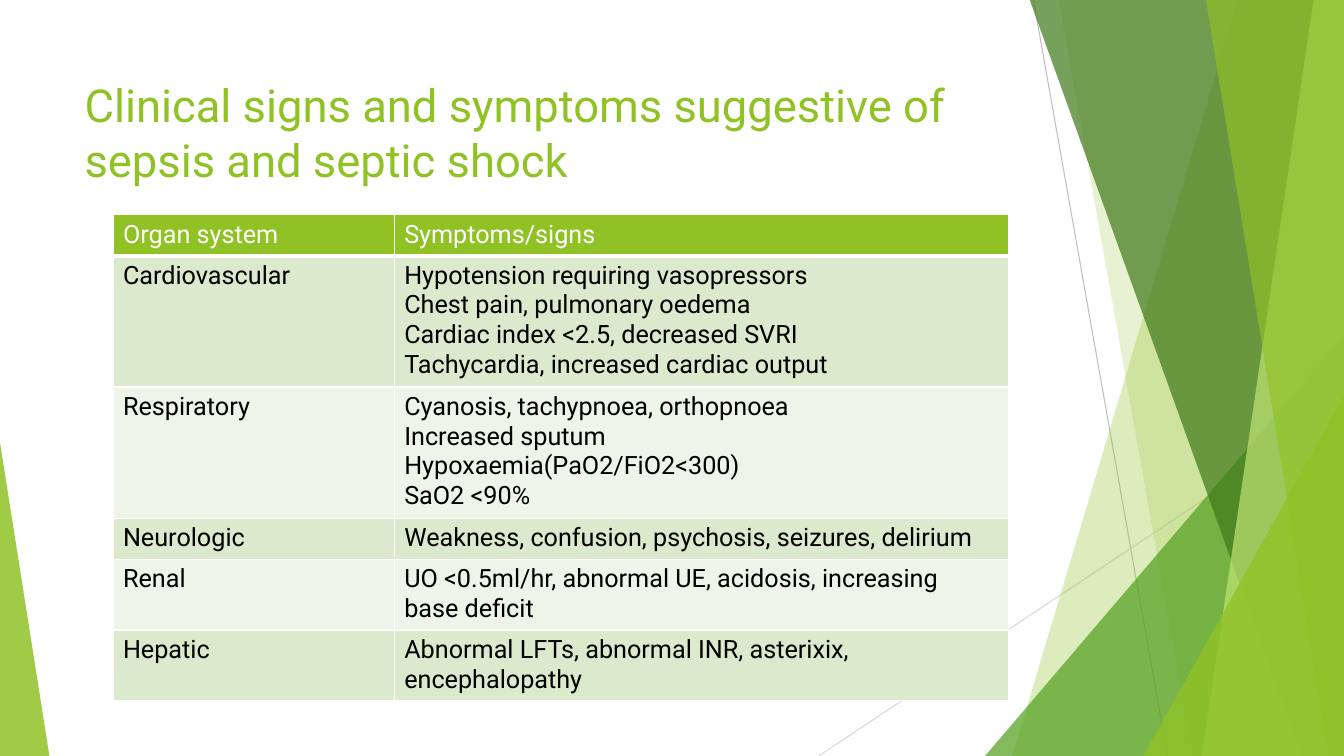
from lxml import etree
from pptx import Presentation
from pptx.dml.color import RGBColor as RGB
from pptx.enum.shapes import MSO_CONNECTOR as CONN, MSO_SHAPE as SHAPE
from pptx.enum.text import MSO_ANCHOR as ANCHOR
from pptx.oxml.ns import qn
from pptx.util import Pt

COLORS = {
    "lime": "90C226", "green": "54A021", "forest": "3F7819", "pale": "C0E474",
    "white": "FFFFFF", "black": "000000", "band": "DBE9CD", "light": "EEF4E8",
    "gray": "BFBFBF", "silver": "D9D9D9",
}
WIDTH, HEIGHT, TOP = 1333, 750, -1
LINES = [((1025, 0), (1158, HEIGHT), "gray"), ((WIDTH, 403), (812, HEIGHT), "silver")]
FACETS = [
    (1228, 1004, "lime", 30),
    (1050, 1183, "lime", 20),
    (977, 333, 356, 417, 1, "green", 72),
    (1021, 1291, "forest", 70),
    (1303, 1192, "pale", 70),
    (1196, 1318, "lime", 65),
    (1134, 393, 199, 357, 1, "lime", 80),
    (0, 439, 49, 311, 0, "lime", 85),
]
SIGNS = [
    ("Organ system", ["Symptoms/signs"]),
    ("Cardiovascular", ["Hypotension requiring vasopressors", "Chest pain, pulmonary oedema",
                        "Cardiac index <2.5, decreased SVRI", "Tachycardia, increased cardiac output"]),
    ("Respiratory", ["Cyanosis, tachypnoea, orthopnoea", "Increased sputum",
                     "Hypoxaemia(PaO2/FiO2<300)", "SaO2 <90%"]),
    ("Neurologic", ["Weakness, confusion, psychosis, seizures, delirium"]),
    ("Renal", ["UO <0.5ml/hr, abnormal UE, acidosis, increasing base deficit"]),
    ("Hepatic", ["Abnormal LFTs, abnormal INR, asterixix, encephalopathy"]),
]


class Deck:
    """Holds the style and the current slide, and draws each kind of element."""

    font = "Roboto"
    scale = 9144

    def __init__(self):
        self.prs = Presentation()
        self.prs.slide_width, self.prs.slide_height = self.px(WIDTH, HEIGHT)
        self.s = self.prs.slides.add_slide(self.prs.slide_layouts[6])

    def px(self, *lengths):
        return [n * self.scale for n in lengths]

    def rgb(self, color):
        return RGB.from_string(COLORS[color])

    def line(self, start, end, color):
        c = self.s.shapes.add_connector(CONN.STRAIGHT, *self.px(*start, *end))
        c.line.color.rgb = self.rgb(color)
        c.line.width = Pt(0.75)
        etree.SubElement(c._element.spPr, qn("a:effectLst"))

    def paint(self, sp, color, alpha):
        sp.shadow.inherit = False
        sp.line.fill.background()
        sp.fill.solid()
        sp.fill.fore_color.rgb = self.rgb(color)
        clr = sp._element.spPr.find(qn("a:solidFill"))[0]
        etree.SubElement(clr, qn("a:alpha"), val=str(alpha * 1000))

    def facet(self, top_x, bottom_x, color, alpha):
        fb = self.s.shapes.build_freeform(top_x, TOP, scale=self.scale)
        fb.add_line_segments([(WIDTH, TOP), (WIDTH, HEIGHT), (bottom_x, HEIGHT)], close=True)
        self.paint(fb.convert_to_shape(), color, alpha)

    def triangle(self, x, y, w, h, apex, color, alpha):
        sp = self.s.shapes.add_shape(SHAPE.ISOSCELES_TRIANGLE, *self.px(x, y, w, h))
        sp.adjustments[0] = apex
        self.paint(sp, color, alpha)

    def text(self, tf, lines, size, color):
        tf.word_wrap = True
        for i, content in enumerate(lines):
            p = tf.add_paragraph() if i else tf.paragraphs[0]
            r = p.add_run()
            r.text = content
            r.font.name = self.font
            r.font.size = Pt(size)
            r.font.color.rgb = self.rgb(color)

    def title(self, x, y, w, h, content):
        tf = self.s.shapes.add_textbox(*self.px(x, y, w, h)).text_frame
        tf.vertical_anchor = ANCHOR.MIDDLE
        self.text(tf, [content], 32.4, "lime")

    def border(self, cell, side, width):
        tc_pr = cell._tc.get_or_add_tcPr()
        ln = etree.SubElement(tc_pr, qn(f"a:ln{side}"), w=str(Pt(width)))
        fill = etree.SubElement(ln, qn("a:solidFill"))
        etree.SubElement(fill, qn("a:srgbClr"), val=COLORS["white"])

    def cell(self, cell, lines, row):
        for side in "LRTB":
            self.border(cell, side, 3 if row == 0 and side == "B" else 1)
        cell.fill.solid()
        fill = "lime" if row == 0 else "band" if row % 2 else "light"
        cell.fill.fore_color.rgb = self.rgb(fill)
        self.text(cell.text_frame, lines, 18, "black" if row else "white")

    def table(self, x, y, widths, row_h, rows):
        box = self.px(x, y, sum(widths), row_h * len(rows))
        tbl = self.s.shapes.add_table(len(rows), len(widths), *box).table
        for col, w in zip(tbl.columns, self.px(*widths)):
            col.width = w
        for i, (organ, signs) in enumerate(rows):
            self.cell(tbl.cell(i, 0), [organ], i)
            self.cell(tbl.cell(i, 1), signs, i)


def main():
    deck = Deck()
    for line in LINES:
        deck.line(*line)
    for facet in FACETS:
        draw = deck.facet if len(facet) == 4 else deck.triangle
        draw(*facet)
    deck.title(74, 67, 940, 128, "Clinical signs and symptoms suggestive of sepsis and septic shock")
    deck.table(112, 213, [279, 609], 41, SIGNS)
    deck.prs.save("out.pptx")


if __name__ == "__main__":
    main()
